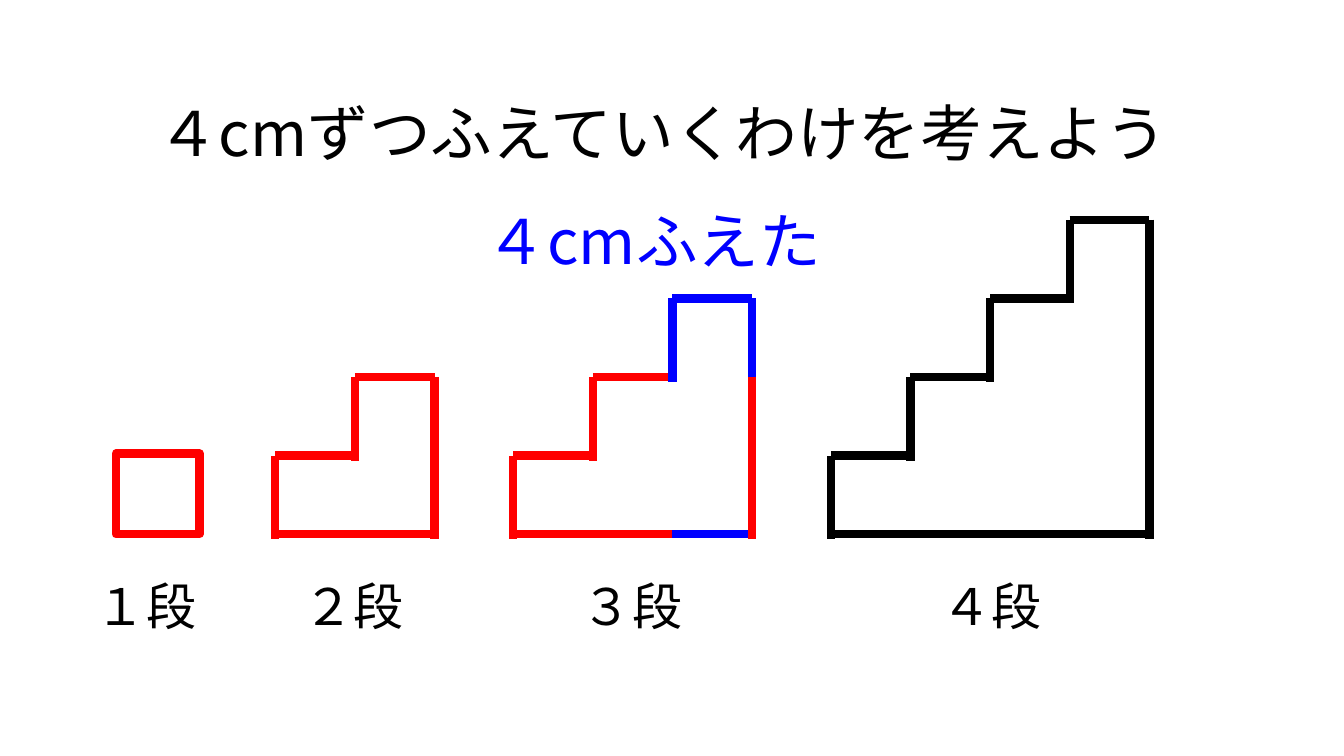
import pptx
import pptx.dml.color
import pptx.enum.shapes
import pptx.enum.text
import pptx.oxml
import pptx.oxml.ns
import pptx.util

Inches = pptx.util.Inches
Pt = pptx.util.Pt
RED = pptx.dml.color.RGBColor(0xFF, 0x00, 0x00)
BLUE = pptx.dml.color.RGBColor(0x00, 0x00, 0xFF)
BLACK = pptx.dml.color.RGBColor(0x00, 0x00, 0x00)
FONT = "Noto Sans CJK JP"
TREAD = 0.79
RISE = 0.78
GROUND = 5.3
OVERLAP = 0.05
EDGE_WIDTH = Pt(6)


def write_text(box, wording, size, color):
    frame = box.text_frame
    frame.word_wrap = True
    frame.auto_size = pptx.enum.text.MSO_AUTO_SIZE.NONE
    frame.vertical_anchor = pptx.enum.text.MSO_ANCHOR.TOP
    paragraph = frame.paragraphs[0]
    paragraph.text = wording
    paragraph.alignment = pptx.enum.text.PP_ALIGN.LEFT
    paragraph.font.size = Pt(size)
    paragraph.font.name = FONT
    paragraph.font.color.rgb = color
    defaults = paragraph._p.pPr.find(pptx.oxml.ns.qn("a:defRPr"))
    east_asian = pptx.oxml.parse_xml(f'<a:ea {pptx.oxml.ns.nsdecls("a")} typeface="{FONT}"/>')
    defaults.find(pptx.oxml.ns.qn("a:latin")).addnext(east_asian)


def add_heading(slide, left, top, width, height):
    heading = slide.shapes.title
    heading.left, heading.top = Inches(left), Inches(top)
    heading.width, heading.height = Inches(width), Inches(height)
    write_text(heading, "４cmずつふえていくわけを考えよう", 44, BLACK)


def add_caption(slide, left, top, width, height, wording, size, color):
    caption = slide.shapes.add_textbox(Inches(left), Inches(top), Inches(width), Inches(height))
    write_text(caption, wording, size, color)


def add_edge(slide, start, end, color):
    edge = slide.shapes.add_connector(
        pptx.enum.shapes.MSO_CONNECTOR.STRAIGHT, *map(Inches, start + end))
    edge.line.color.rgb = color
    edge.line.width = EDGE_WIDTH
    edge._element.spPr.append(
        pptx.oxml.parse_xml(f'<a:effectLst {pptx.oxml.ns.nsdecls("a")}/>'))


def add_square(slide, left, top, width, height):
    square = slide.shapes.add_shape(
        pptx.enum.shapes.MSO_SHAPE.RECTANGLE,
        Inches(left), Inches(top), Inches(width), Inches(height))
    square.shadow.inherit = False
    square.fill.background()
    square.line.color.rgb = RED
    square.line.width = EDGE_WIDTH


def add_staircase(slide, left, steps, color, last_step_color):
    right = left + steps * TREAD
    last_left = right - TREAD
    summit = GROUND - steps * RISE
    for step in range(steps):
        step_color = last_step_color if step == steps - 1 else color
        x = left + step * TREAD
        top = GROUND - (step + 1) * RISE
        add_edge(slide, (x, top), (x, top + RISE + OVERLAP), step_color)
        add_edge(slide, (x, top), (x + TREAD, top), step_color)
    add_edge(slide, (left, GROUND), (last_left, GROUND), color)
    add_edge(slide, (last_left, GROUND), (right, GROUND), last_step_color)
    add_edge(slide, (right, summit), (right, summit + RISE), last_step_color)
    add_edge(slide, (right, summit + RISE), (right, GROUND + OVERLAP), color)


def main():
    deck = pptx.Presentation()
    deck.slide_width, deck.slide_height = Inches(13.33), Inches(7.5)
    slide = deck.slides.add_slide(deck.slide_layouts[5])

    add_heading(slide, 1.46, 0.89, 10.34, 0.84)
    add_square(slide, 1.15, 4.5, 0.83, 0.8)
    add_staircase(slide, 2.73, 2, RED, RED)
    add_staircase(slide, 5.09, 3, RED, BLUE)
    add_staircase(slide, 8.24, 4, BLACK, BLACK)

    for left, count in zip((0.85, 2.91, 5.67, 9.24), "１２３４"):
        add_caption(slide, left, 5.66, 1.21, 0.71, f"{count}段", 36, BLACK)
    add_caption(slide, 4.72, 1.96, 3.55, 0.84, "４cmふえた", 44, BLUE)

    deck.save("out.pptx")


if __name__ == "__main__":
    main()
